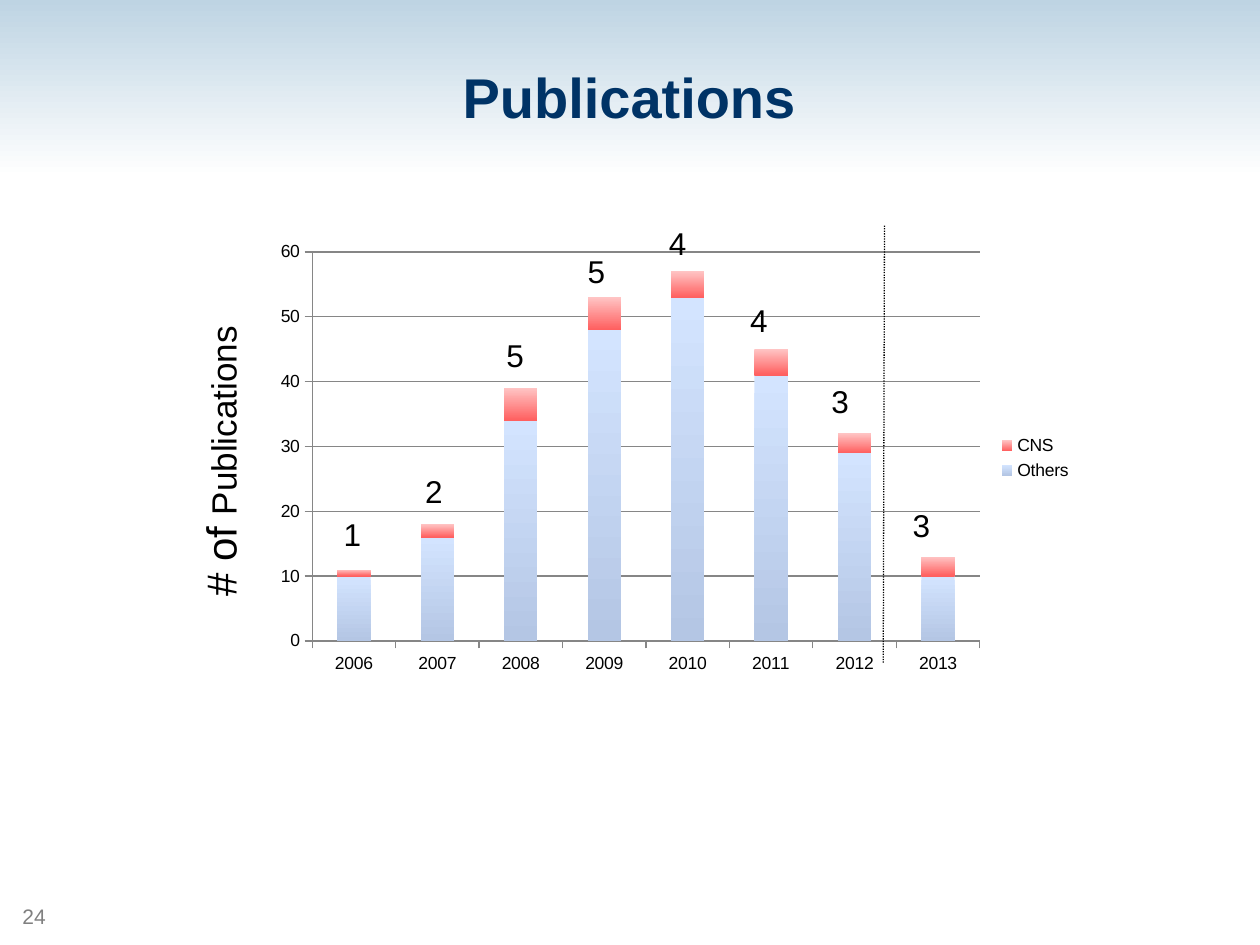
import pptx
import pptx.chart.data
import pptx.dml.color
import pptx.enum.chart
import pptx.enum.dml
import pptx.enum.shapes
import pptx.enum.text
import pptx.oxml
import pptx.oxml.ns
import pptx.util

Inches = pptx.util.Inches
Pt = pptx.util.Pt

FONT = "Arial"
AXIS_GREY = "868686"
YEARS = [str(year) for year in range(2006, 2014)]
# name, counts, gradient top colour, gradient bottom colour
SERIES = [
    ("Others", [10, 16, 34, 48, 53, 41, 29, 10], "D3E4FF", "B4C6E4"),
    ("CNS", [1, 2, 5, 5, 4, 4, 3, 3], "FFC4C4", "FF6060"),
]
LABEL_LEFT, LABEL_STEP = 2.63, 0.645
LABEL_TOPS = [4.04, 3.7, 2.62, 1.95, 1.73, 2.34, 2.98, 3.97]


def color(hex_code):
    return pptx.dml.color.RGBColor.from_string(hex_code)


def style(font, size, hex_code, bold=False):
    font.name, font.size, font.bold = FONT, Pt(size), bold
    font.color.rgb = color(hex_code)


def place(shape, left, top, width, height):
    shape.left, shape.top = Inches(left), Inches(top)
    shape.width, shape.height = Inches(width), Inches(height)


def fill_downward(fill, top, bottom):
    """Fill with a vertical gradient."""
    fill.gradient()
    fill.gradient_angle = 270
    for stop, hex_code in zip(fill.gradient_stops, (top, bottom)):
        stop.color.rgb = color(hex_code)


def add_band(page):
    band = page.shapes.add_shape(
        pptx.enum.shapes.MSO_SHAPE.RECTANGLE, 0, 0, Inches(10), Inches(1.41))
    band.shadow.inherit = False
    band.line.fill.background()
    fill_downward(band.fill, "BED4E3", "FFFFFF")
    page.shapes._spTree.insert(2, band._element)


def set_title(page, text):
    title = page.shapes.title
    place(title, 0.33, 0.17, 9.33, 1.25)
    frame = title.text_frame
    frame.text = text
    frame.vertical_anchor = pptx.enum.text.MSO_ANCHOR.MIDDLE
    para = frame.paragraphs[0]
    para.alignment = pptx.enum.text.PP_ALIGN.CENTER
    para.line_spacing = 0.9
    style(para.runs[0].font, 32, "003366", bold=True)


def add_text(page, spans, left, top, width, height, hex_code="000000", wrap=False):
    """Add a one-line box from (text, size) spans."""
    box = page.shapes.add_textbox(
        Inches(left), Inches(top), Inches(width), Inches(height))
    frame = box.text_frame
    frame.word_wrap = wrap
    frame.auto_size = pptx.enum.text.MSO_AUTO_SIZE.SHAPE_TO_FIT_TEXT
    for text, size in spans:
        span = frame.paragraphs[0].add_run()
        span.text = text
        style(span.font, size, hex_code)
    return box


def set_plot_area(chart, **shares):
    """Fix the inner plot area as shares of the chart's size."""
    namespace = pptx.oxml.ns.nsdecls("c")
    sides = "".join(f'<c:{side} val="{share}"/>' for side, share in shares.items())
    layout = pptx.oxml.parse_xml(
        f'<c:layout {namespace}><c:manualLayout><c:layoutTarget val="inner"/>'
        f'<c:xMode val="edge"/><c:yMode val="edge"/>{sides}'
        '</c:manualLayout></c:layout>')
    area = chart._chartSpace.chart.plotArea
    for old in area.findall(pptx.oxml.ns.qn("c:layout")):
        area.remove(old)
    area.insert(0, layout)


def add_chart(page):
    data = pptx.chart.data.CategoryChartData()
    data.categories = YEARS
    for name, counts, _, _ in SERIES:
        data.add_series(name, counts)
    chart = page.shapes.add_chart(
        pptx.enum.chart.XL_CHART_TYPE.COLUMN_STACKED,
        Inches(2.1), Inches(1.85), Inches(6.51), Inches(3.57), data).chart
    style(chart.font, 10, "000000")
    chart.has_title = False
    chart.has_legend = True
    chart.legend.position = pptx.enum.chart.XL_LEGEND_POSITION.RIGHT
    chart.legend.include_in_layout = False
    plot = chart.plots[0]
    plot.vary_by_categories = False
    plot.gap_width, plot.overlap = 150, 100
    for series, (_, _, top, bottom) in zip(plot.series, SERIES):
        fill_downward(series.format.fill, top, bottom)
    values = chart.value_axis
    values.minimum_scale, values.maximum_scale, values.major_unit = 0, 60, 10
    values.has_major_gridlines = True
    for axis in (chart.category_axis, values):
        axis.major_tick_mark = pptx.enum.chart.XL_TICK_MARK.OUTSIDE
    for part in (chart.category_axis, values, values.major_gridlines):
        part.format.line.color.rgb = color(AXIS_GREY)
        part.format.line.width = Pt(0.75)
    set_plot_area(chart, x=0.058, y=0.042, w=0.814, h=0.865)


def add_dotted_line(page, start, end):
    ends = [Inches(length) for length in start + end]
    line = page.shapes.add_connector(
        pptx.enum.shapes.MSO_CONNECTOR.STRAIGHT, *ends)
    line.line.color.rgb = color("000000")
    line.line.width = Pt(0.75)
    line.line.dash_style = pptx.enum.dml.MSO_LINE.ROUND_DOT
    line._element.spPr.append(
        pptx.oxml.parse_xml(f'<a:effectLst {pptx.oxml.ns.nsdecls("a")}/>'))


def main():
    deck = pptx.Presentation()
    deck.slide_width, deck.slide_height = Inches(10), Inches(7.5)
    page = deck.slides.add_slide(deck.slide_layouts[5])
    add_band(page)
    set_title(page, "Publications")
    add_text(page, [("24", 12)], 0.08, 7.12, 0.69, 0.3, "808080", wrap=True)
    add_chart(page)
    axis_name = add_text(
        page, [("# of ", 24), ("Publications", 20)], 0.56, 3.4, 2.37, 0.5)
    axis_name.rotation = 270
    add_dotted_line(page, (7.02, 1.79), (7.01, 5.26))
    cns_counts = SERIES[1][1]
    for column, (count, top) in enumerate(zip(cns_counts, LABEL_TOPS)):
        left = LABEL_LEFT + column * LABEL_STEP
        add_text(page, [(str(count), 18)], left, top, 0.34, 0.4)
    deck.save("out.pptx")


if __name__ == "__main__":
    main()
